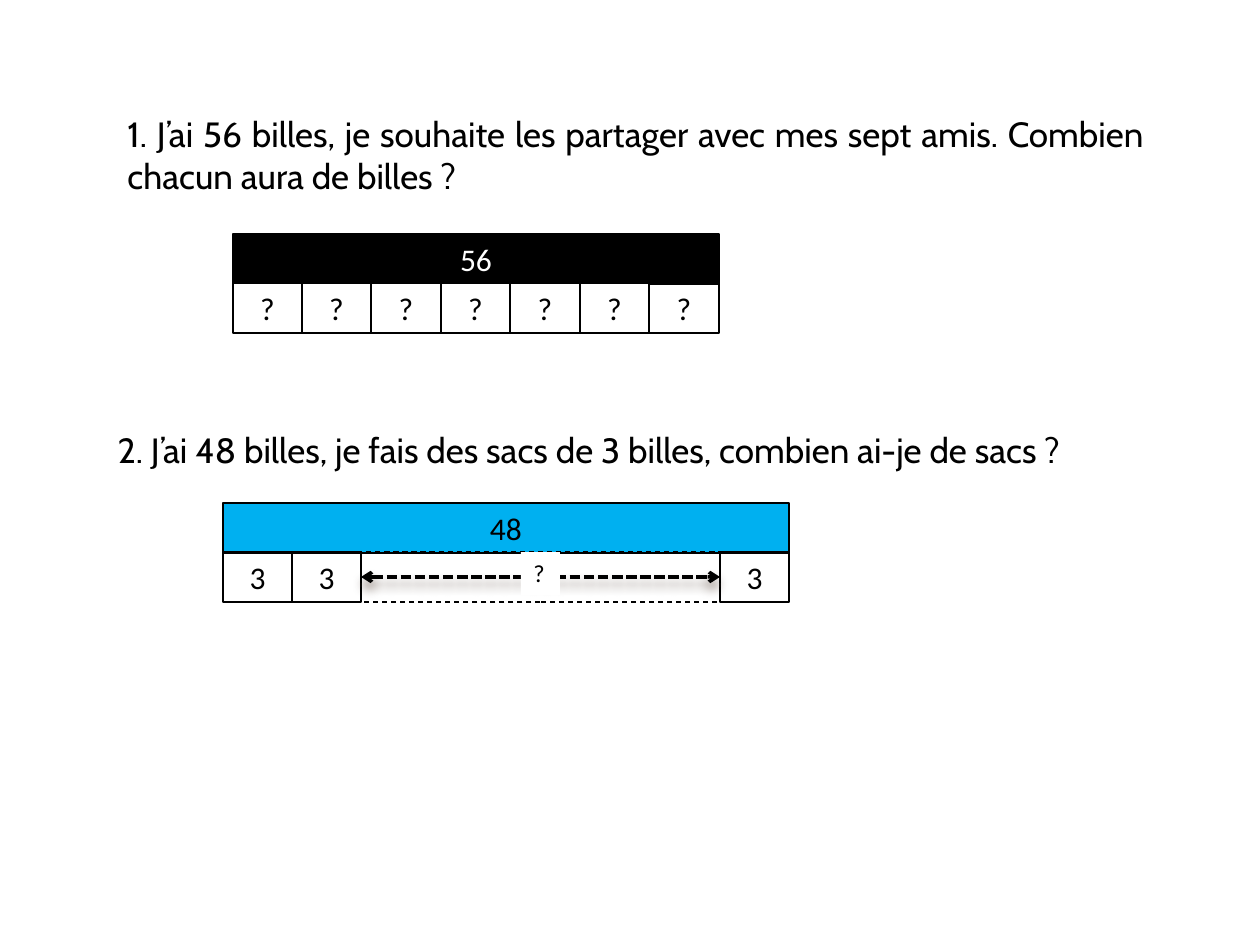
"""Build a slide with two division problems and their bar models."""
from dataclasses import dataclass
from typing import Optional

from lxml.etree import SubElement
from pptx import Presentation
from pptx.dml.color import RGBColor
from pptx.enum.dml import MSO_LINE
from pptx.enum.shapes import MSO_CONNECTOR, MSO_SHAPE
from pptx.enum.text import MSO_ANCHOR, PP_ALIGN
from pptx.oxml.ns import qn
from pptx.util import Emu, Pt

COLORS = {"black": "000000", "white": "FFFFFF", "blue": "00B0F0", "shadow": "4E3B30"}
SCALE = 914400 / 126
ROW_HEIGHT = 50
ROW_STEP = 49
SEVEN_CELLS = 486


@dataclass
class Box:
    left: int
    top: int
    width: int
    height: int = ROW_HEIGHT
    label: str = ""
    fill: Optional[str] = None
    ink: str = "black"
    size: int = 18
    align: PP_ALIGN = PP_ALIGN.CENTER
    outlined: bool = True
    dash: Optional[MSO_LINE] = None


def px(length: int) -> Emu:
    return Emu(round(length * SCALE))


def color(name: str) -> RGBColor:
    return RGBColor.from_string(COLORS[name])


def write(paragraph, wording: str, font_name: str, size: int, ink: str, align: PP_ALIGN) -> None:
    paragraph.alignment = align
    run = paragraph.add_run()
    run.text = wording
    run.font.name = font_name
    run.font.size = Pt(size)
    run.font.color.rgb = color(ink)


def draw_box(slide, box: Box) -> None:
    rectangle = slide.shapes.add_shape(
        MSO_SHAPE.RECTANGLE, px(box.left), px(box.top), px(box.width), px(box.height))
    rectangle.shadow.inherit = False
    if box.fill:
        rectangle.fill.solid()
        rectangle.fill.fore_color.rgb = color(box.fill)
    else:
        rectangle.fill.background()
    if box.outlined:
        rectangle.line.color.rgb = color("black")
        rectangle.line.width = Pt(0.75)
        if box.dash:
            rectangle.line.dash_style = box.dash
    else:
        rectangle.line.fill.background()
    if box.label:
        frame = rectangle.text_frame
        frame.word_wrap = True
        frame.vertical_anchor = MSO_ANCHOR.TOP
        write(frame.paragraphs[0], box.label, "Calibri", box.size, box.ink, box.align)


def cell(left: int, bar_top: int, index: int, label: str, fill: Optional[str] = None) -> Box:
    start, end = (edge * SEVEN_CELLS // 7 for edge in (index, index + 1))
    return Box(left + start, bar_top + ROW_STEP, end - start, label=label, fill=fill)


def draw_span(slide, start: int, end: int, middle: int) -> None:
    arrow = slide.shapes.add_connector(
        MSO_CONNECTOR.STRAIGHT, px(start), px(middle), px(end), px(middle))
    arrow.line.color.rgb = color("black")
    arrow.line.width = Pt(2)
    arrow.line.dash_style = MSO_LINE.SQUARE_DOT
    properties = arrow.line._get_or_add_ln()
    for tip in ("a:headEnd", "a:tailEnd"):
        SubElement(properties, qn(tip), type="arrow")
    effects = SubElement(arrow._element.spPr, qn("a:effectLst"))
    shadow = SubElement(effects, qn("a:outerShdw"), blurRad=str(Pt(6)), dist=str(Pt(4)),
                        dir="5400000", rotWithShape="0")
    tint = SubElement(shadow, qn("a:srgbClr"), val=COLORS["shadow"])
    SubElement(tint, qn("a:alpha"), val="60000")


def draw_sharing_problem(slide) -> None:
    statement = slide.shapes.add_textbox(px(115), px(106), px(1042), px(384))
    statement.text_frame.word_wrap = True
    paragraph = statement.text_frame.paragraphs[0]
    paragraph.space_before = Pt(2.6)
    write(paragraph, "1. J’ai 56 billes, je souhaite les partager avec mes sept amis. "
          "Combien chacun aura de billes ?", "Cabin", 20, "black", PP_ALIGN.JUSTIFY)
    left, top = 233, 234
    shares = [cell(left, top, index, "?", "white") for index in range(7)]
    total = Box(left, top, SEVEN_CELLS, label="56", fill="black", ink="white")
    for box in (shares[-1], total, *shares[:-1]):
        draw_box(slide, box)


def draw_grouping_problem(slide) -> None:
    statement = slide.shapes.title
    statement.left, statement.top = px(105), px(393)
    statement.width, statement.height = px(1071), px(203)
    frame = statement.text_frame
    frame.word_wrap = True
    frame.vertical_anchor = MSO_ANCHOR.MIDDLE
    frame.margin_top, frame.margin_bottom = 0, px(89)
    write(frame.paragraphs[0],
          "2. J’ai 48 billes, je fais des sacs de 3 billes, combien ai-je de sacs ?",
          "Cabin", 20, "black", PP_ALIGN.LEFT)
    left, top, width = 223, 503, 566
    first, second = (cell(left, top, index, "3") for index in range(2))
    last = Box(left + width - second.width, second.top, second.width, label="3")
    for box in (Box(left, top, width, label="48", fill="blue"), first, second, last):
        draw_box(slide, box)
    gap_start = second.left + second.width
    draw_span(slide, gap_start, last.left, second.top + ROW_HEIGHT // 2)
    draw_box(slide, Box(gap_start, second.top, last.left - gap_start, dash=MSO_LINE.DASH))
    draw_box(slide, Box(521, second.top, 39, 43, "?", "white", size=14,
                        align=PP_ALIGN.LEFT, outlined=False))


def main() -> None:
    presentation = Presentation()
    presentation.slide_width, presentation.slide_height = px(1260), px(945)
    slide = presentation.slides.add_slide(presentation.slide_layouts[0])
    subtitle = slide.placeholders[1]._element
    subtitle.getparent().remove(subtitle)
    draw_sharing_problem(slide)
    draw_grouping_problem(slide)
    presentation.save("out.pptx")


if __name__ == "__main__":
    main()
